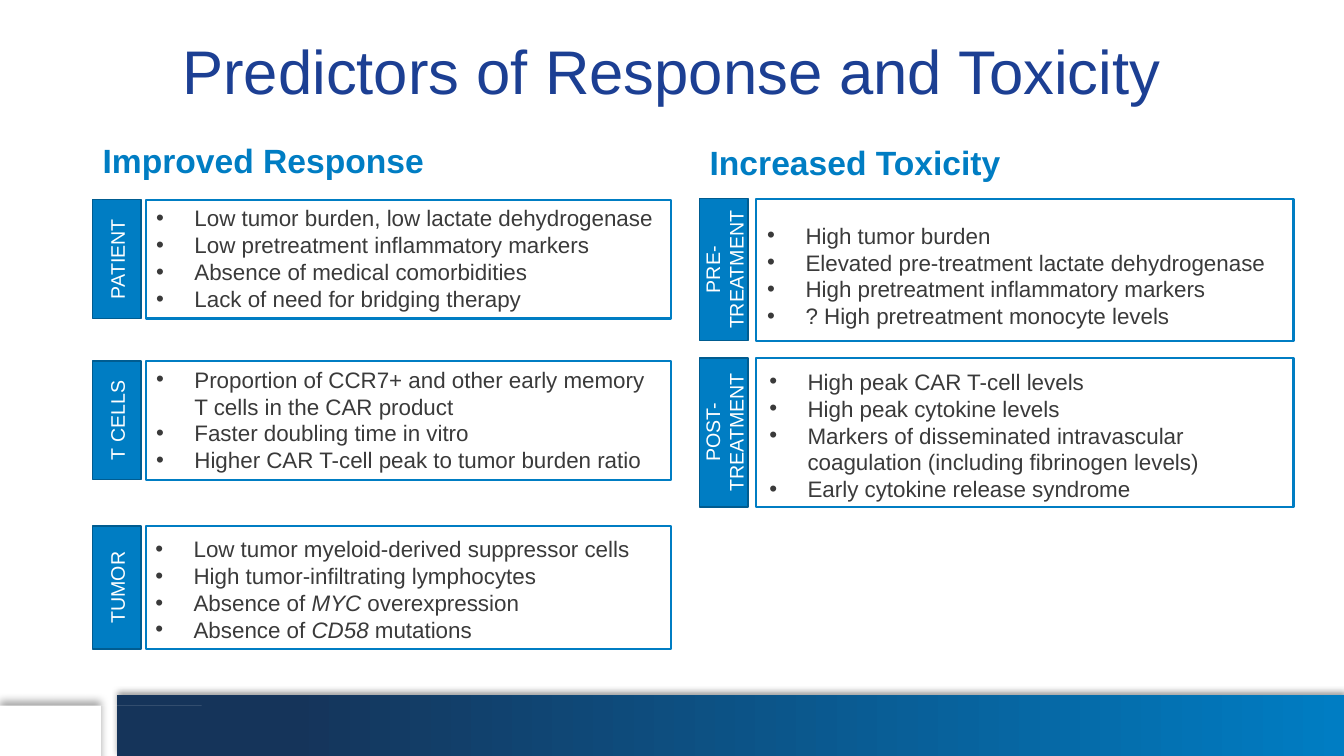
import math
from dataclasses import dataclass
from lxml import etree
from pptx import Presentation, util as u
from pptx.dml.color import RGBColor
from pptx.enum import shapes, text
from pptx.oxml.ns import qn


@dataclass(frozen=True)
class Theme:
    font: str = "Arial"
    navy: str = "1C3F93"
    blue: str = "007DC3"
    edge: str = "005C90"
    deep: str = "15345A"
    ink: str = "3A3A3A"
    white: str = "FFFFFF"
    title_size: int = 44
    heading_size: int = 24
    body_size: int = 16
    tab_size: int = 14


@dataclass(frozen=True)
class Box:
    left: float
    top: float
    width: float
    height: float

    def inches(self):
        return [u.Inches(v) for v in (self.left, self.top, self.width, self.height)]


THEME = Theme()
SLIDE = Box(0, 0, 13.33, 7.5)
TAB_WIDTH = 0.48
BULLET_INDENT = 0.38

COLUMNS = [
    ("Improved Response", Box(0.92, 1.38, 5.74, 0.45), 0.05, [
        ("PATIENT", 1.98, 1.18, (0.1, 0.05), [
            "Low tumor burden, low lactate dehydrogenase",
            "Low pretreatment inflammatory markers",
            "Absence of medical comorbidities",
            "Lack of need for bridging therapy"]),
        ("T CELLS", 3.58, 1.18, (0.1, 0.05), [
            "Proportion of CCR7+ and other early memory T cells in the CAR product",
            "Faster doubling time in vitro",
            "Higher CAR T-cell peak to tumor burden ratio"]),
        ("TUMOR", 5.22, 1.22, (0.09, 0.09), [
            "Low tumor myeloid-derived suppressor cells",
            "High tumor-infiltrating lymphocytes",
            "Absence of *MYC* overexpression",
            "Absence of *CD58* mutations"]),
    ]),
    ("Increased Toxicity", Box(6.94, 1.4, 5.89, 0.45), 0.08, [
        ("PRE-TREATMENT", 1.97, 1.41, (0.11, 0.23), [
            "High tumor burden",
            "Elevated pre-treatment lactate dehydrogenase",
            "High pretreatment inflammatory markers",
            "? High pretreatment monocyte levels"]),
        ("POST-TREATMENT", 3.55, 1.48, (0.13, 0.1), [
            "High peak CAR T-cell levels",
            "High peak cytokine levels",
            "Markers of disseminated intravascular coagulation (including fibrinogen levels)",
            "Early cytokine release syndrome"]),
    ]),
]


def rgb(value):
    return RGBColor.from_string(value)


def style(paragraph, size, color, bold=False):
    font = paragraph.font
    font.name, font.size, font.bold = THEME.font, u.Pt(size), bold
    font.color.rgb = rgb(color)


def set_frame(frame, anchor, left=0.0, top=0.0, right=0.0):
    frame.word_wrap = True
    frame.vertical_anchor = anchor
    frame.margin_left, frame.margin_top = u.Inches(left), u.Inches(top)
    frame.margin_right, frame.margin_bottom = u.Inches(right), 0


def upward_shadow(shape, blur, opacity):
    shape.shadow.inherit = False
    effects = shape._element.spPr.find(qn("a:effectLst"))
    shadow = etree.SubElement(effects, qn("a:outerShdw"), blurRad=str(u.Pt(blur)),
                              dist=str(u.Pt(3)), dir="16200000", rotWithShape="0")
    color = etree.SubElement(shadow, qn("a:srgbClr"), val="000000")
    etree.SubElement(color, qn("a:alpha"), val=str(opacity * 1000))


def rectangle(slide, box, line, weight):
    shape = slide.shapes.add_shape(shapes.MSO_SHAPE.RECTANGLE, *box.inches())
    shape.shadow.inherit = False
    shape.line.color.rgb = rgb(line)
    shape.line.width = u.Pt(weight)
    return shape


def add_footer(slide, box):
    band_top = box.top + box.height - 0.6
    band_box = Box(1.16, band_top, box.width - 1.16, 0.6)
    band = slide.shapes.add_shape(shapes.MSO_SHAPE.RECTANGLE, *band_box.inches())
    band.line.fill.background()
    band.fill.gradient()
    band.fill.gradient_angle = 180
    for stop, position, color in zip(band.fill.gradient_stops, (0, 0.86),
                                     (THEME.blue, THEME.deep)):
        stop.position = position
        stop.color.rgb = rgb(color)
    upward_shadow(band, 4, 40)

    radius_x, radius_y, steps = 0.42, box.height / 2, 40
    straight, middle = 1.12, box.top + radius_y
    curve = [(straight + radius_x * math.sin(math.pi * i / steps),
              middle - radius_y * math.cos(math.pi * i / steps))
             for i in range(steps + 1)]
    builder = slide.shapes.build_freeform(box.left, box.top, scale=u.Inches(1))
    builder.add_line_segments(curve + [(box.left, box.top + box.height)], close=True)
    end_cap = builder.convert_to_shape()
    end_cap.fill.solid()
    end_cap.fill.fore_color.rgb = rgb(THEME.white)
    end_cap.line.fill.background()
    upward_shadow(end_cap, 6.1, 34)


def add_title(slide, box):
    frame = slide.shapes.add_textbox(*box.inches()).text_frame
    set_frame(frame, text.MSO_ANCHOR.MIDDLE)
    title = frame.paragraphs[0]
    title.text = "Predictors of Response and Toxicity"
    title.alignment = text.PP_ALIGN.CENTER
    title.line_spacing = 0.9
    style(title, THEME.title_size, THEME.navy)


def add_heading(slide, box, wording):
    frame = slide.shapes.add_textbox(*box.inches()).text_frame
    set_frame(frame, text.MSO_ANCHOR.BOTTOM, 0.1)
    frame.margin_bottom = u.Inches(0.05)
    heading = frame.paragraphs[0]
    heading.text = wording
    heading.line_spacing = 0.8
    style(heading, THEME.heading_size, THEME.blue, bold=True)


def add_predictor(paragraph, wording):
    properties = paragraph._p.get_or_add_pPr()
    indent = u.Inches(BULLET_INDENT)
    properties.set("marL", str(indent))
    properties.set("indent", str(-indent))
    etree.SubElement(properties, qn("a:buFont"), typeface=THEME.font)
    etree.SubElement(properties, qn("a:buChar"), char="•")
    paragraph.alignment = text.PP_ALIGN.LEFT
    for index, part in enumerate(wording.split("*")):
        run = paragraph.add_run()
        run.text = part
        if index % 2:
            run.font.italic = True
    style(paragraph, THEME.body_size, THEME.ink)


def add_panel(slide, box, gap, label, padding, predictors):
    tab = rectangle(slide, Box(box.left, box.top, TAB_WIDTH, box.height), THEME.edge, 1)
    tab.fill.solid()
    tab.fill.fore_color.rgb = rgb(THEME.blue)
    set_frame(tab.text_frame, text.MSO_ANCHOR.MIDDLE)
    tab.text_frame._txBody.bodyPr.set("vert", "vert270")
    caption = tab.text_frame.paragraphs[0]
    caption.text = label
    caption.alignment = text.PP_ALIGN.CENTER
    style(caption, THEME.tab_size, THEME.white)

    offset = TAB_WIDTH + gap
    card = rectangle(slide, Box(box.left + offset, box.top, box.width - offset, box.height),
                     THEME.blue, 1.5)
    card.fill.background()
    frame = card.text_frame
    set_frame(frame, text.MSO_ANCHOR.TOP, *padding, right=0.1)
    for index, predictor in enumerate(predictors):
        paragraph = frame.add_paragraph() if index else frame.paragraphs[0]
        add_predictor(paragraph, predictor)


def add_column(slide, box, heading, gap, panels):
    add_heading(slide, box, heading)
    for label, top, height, padding, predictors in panels:
        add_panel(slide, Box(box.left, top, box.width, height), gap, label,
                  padding, predictors)


def main():
    deck = Presentation()
    deck.slide_width, deck.slide_height = SLIDE.inches()[2:]
    slide = deck.slides.add_slide(deck.slide_layouts[6])
    add_footer(slide, Box(0, 6.76, SLIDE.width, 0.74))
    add_title(slide, Box(0.92, 0.4, SLIDE.width - 2 * 0.92, 0.68))
    for heading, box, gap, panels in COLUMNS:
        add_column(slide, box, heading, gap, panels)
    deck.save("out.pptx")


if __name__ == "__main__":
    main()
